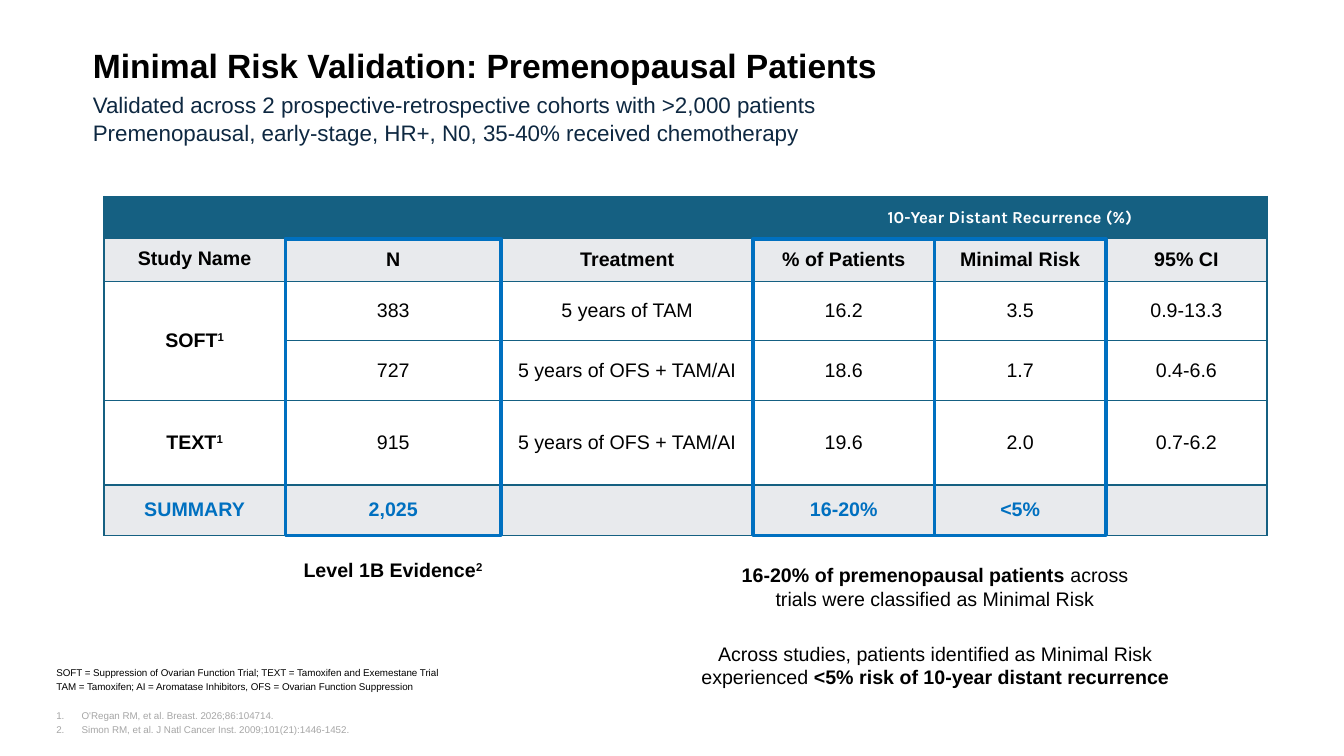
from itertools import accumulate
from pptx import Presentation
from pptx.dml.color import RGBColor
from pptx.enum.shapes import MSO_SHAPE
from pptx.enum.text import MSO_ANCHOR, MSO_AUTO_SIZE, PP_ALIGN
from pptx.oxml.ns import qn
from pptx.util import Cm, Pt
from lxml.etree import SubElement

BLACK = RGBColor(0, 0, 0)
WHITE = RGBColor(255, 255, 255)
NAVY = RGBColor(0x0E, 0x28, 0x41)
TEAL = RGBColor(0x15, 0x60, 0x82)
BLUE = RGBColor(0x00, 0x70, 0xC0)
PALE = RGBColor(0xE8, 0xEA, 0xED)
GREY = RGBColor(0xA6, 0xA6, 0xA6)

TITLE = "Minimal Risk Validation: Premenopausal Patients"
LEAD = [
    "Validated across 2 prospective-retrospective cohorts with >2,000 patients",
    "Premenopausal, early-stage, HR+, N0, 35-40% received chemotherapy",
]
SPAN = "10-Year Distant Recurrence (%)"
# A tuple holds a name and its raised reference number.
ROWS = [
    ["", "", "", SPAN, "", ""],
    ["Study Name", "N", "Treatment", "% of Patients", "Minimal Risk", "95% CI"],
    [("SOFT", "1"), "383", "5 years of TAM", "16.2", "3.5", "0.9-13.3"],
    ["", "727", "5 years of OFS + TAM/AI", "18.6", "1.7", "0.4-6.6"],
    [("TEXT", "1"), "915", "5 years of OFS + TAM/AI", "19.6", "2.0", "0.7-6.2"],
    ["SUMMARY", "2,025", "", "16-20%", "<5%", ""],
]
MERGES = [(0, 0, 0, 2), (0, 3, 0, 5), (2, 0, 3, 0)]
LEFT, TOP = 2.62, 4.95
WIDTHS = [4.57, 5.44, 6.35, 4.57, 4.32, 4.06]
HEIGHTS = [1.07, 1.07, 1.5, 1.5, 2.13, 1.27]
FRAMED = [1, 3, 4]

# Place, wrap, runs of (text, bold, raised)
CLAIMS = [
    ((6.91, 13.72, 5.99, 1.27), False,
     [("Level 1B Evidence", True, False), ("2", True, True)]),
    ((17.42, 14.02, 12.29, 1.52), True,
     [("16-20% of premenopausal patients ", True, False),
      ("across trials were classified as Minimal Risk", False, False)]),
    ((16.31, 16, 14.53, 1.52), True,
     [("Across studies, patients identified as Minimal Risk experienced ", False, False),
      ("<5% risk of 10-year distant recurrence", True, False)]),
]
TERMS = [
    "SOFT = Suppression of Ovarian Function Trial; TEXT = Tamoxifen and Exemestane Trial",
    "TAM = Tamoxifen; AI = Aromatase Inhibitors, OFS = Ovarian Function Suppression",
]
REFS = [
    "O'Regan RM, et al. Breast. 2026;86:104714.",
    "Simon RM, et al. J Natl Cancer Inst. 2009;101(21):1446-1452.",
]


def add_run(par, text, size, color=BLACK, bold=False, raised=False, face="Arial"):
    run = par.add_run()
    run.text = text
    font = run.font
    font.name, font.size, font.bold = face, Pt(size), bold
    font.color.rgb = color
    if raised:
        run._r.get_or_add_rPr().set("baseline", "30000")


def set_frame(frame, anchor, side=0, wrap=True):
    frame.auto_size = MSO_AUTO_SIZE.NONE
    frame.word_wrap = wrap
    frame.vertical_anchor = anchor
    frame.margin_left = frame.margin_right = Cm(side)
    frame.margin_top = frame.margin_bottom = 0


def place(shape, box):
    shape.left, shape.top, shape.width, shape.height = map(Cm, box)


def add_pars(frame, count):
    return [frame.paragraphs[0]] + [frame.add_paragraph() for _ in range(count - 1)]


def set_edges(cell, sides):
    """Draw the named sides (L, R, T, B) and hide the others."""
    props = cell._tc.get_or_add_tcPr()
    for side in "LRTB":
        line = SubElement(props, qn("a:ln" + side), w=str(Pt(1)))
        if side in sides:
            fill = SubElement(line, qn("a:solidFill"))
            SubElement(fill, qn("a:srgbClr"), val=str(TEAL))
        else:
            SubElement(line, qn("a:noFill"))


def fill_cell(cell, row, col, text):
    last = col + (cell.span_width if cell.is_merge_origin else 1) == len(WIDTHS)
    set_edges(cell, "TB" + "L" * (col == 0) + "R" * last)
    cell.fill.solid()
    cell.fill.fore_color.rgb = {0: TEAL, 1: PALE, 5: PALE}.get(row, WHITE)
    cell.vertical_anchor = MSO_ANCHOR.MIDDLE
    cell.margin_left = cell.margin_right = cell.margin_top = cell.margin_bottom = 0
    par = cell.text_frame.paragraphs[0]
    par.alignment = PP_ALIGN.CENTER
    if text == SPAN:
        add_run(par, text, 12, WHITE, True, face="Karla")
    elif text:
        color = BLUE if row == 5 else BLACK
        bold = col == 0 or row in (1, 5)
        for i, part in enumerate(text if isinstance(text, tuple) else (text,)):
            add_run(par, part, 14, color, bold, i == 1)
    if (row, col) == (1, 0):
        par.line_spacing = 0.85


def add_table(slide):
    table = slide.shapes.add_table(
        len(HEIGHTS), len(WIDTHS), Cm(LEFT), Cm(TOP),
        Cm(sum(WIDTHS)), Cm(sum(HEIGHTS))).table
    table.first_row = table.horz_banding = False
    for col, wide in zip(table.columns, WIDTHS):
        col.width = Cm(wide)
    for row, high in zip(table.rows, HEIGHTS):
        row.height = Cm(high)
    for r1, c1, r2, c2 in MERGES:
        table.cell(r1, c1).merge(table.cell(r2, c2))
    for r, row in enumerate(ROWS):
        for c, text in enumerate(row):
            cell = table.cell(r, c)
            if not cell.is_spanned:
                fill_cell(cell, r, c, text)


def add_claim(slide, box, wrap, runs):
    pill = slide.shapes.add_shape(MSO_SHAPE.ROUNDED_RECTANGLE, *map(Cm, box))
    pill.adjustments[0] = 0.5
    pill.shadow.inherit = False
    pill.fill.solid()
    pill.fill.fore_color.rgb = WHITE
    pill.line.fill.background()
    set_frame(pill.text_frame, MSO_ANCHOR.MIDDLE, 0.51 if wrap else 0, wrap)
    par = pill.text_frame.paragraphs[0]
    par.alignment = PP_ALIGN.CENTER
    for text, bold, raised in runs:
        add_run(par, text, 14, BLACK, bold, raised)


def add_notes(slide):
    """Terms and numbered references at the foot of the slide."""
    frame = slide.shapes.add_textbox(*map(Cm, (1.42, 17.27, 11.43, 1.27))).text_frame
    set_frame(frame, MSO_ANCHOR.BOTTOM)
    pars = add_pars(frame, len(TERMS + REFS))
    for i, (par, text) in enumerate(zip(pars, TERMS + REFS)):
        par.space_after = Pt(2)
        ref = i >= len(TERMS)
        if i == len(TERMS):
            par.space_before = Pt(10)
        if ref:
            props = par._p.get_or_add_pPr()
            props.set("marL", str(Cm(0.64)))
            props.set("indent", str(-Cm(0.64)))
            SubElement(props, qn("a:buFont"), typeface="+mj-lt")
            SubElement(props, qn("a:buAutoNum"), type="arabicPeriod")
        add_run(par, text, 7, GREY if ref else BLACK)


def main():
    deck = Presentation()
    deck.slide_width, deck.slide_height = Cm(33.87), Cm(19.05)
    slide = deck.slides.add_slide(deck.slide_layouts[1])

    title, body = slide.placeholders
    place(title, (2.34, 1.02, 24.66, 1.22))
    set_frame(title.text_frame, MSO_ANCHOR.MIDDLE)
    par = title.text_frame.paragraphs[0]
    par.alignment = PP_ALIGN.LEFT
    add_run(par, TITLE, 24, BLACK, True)

    place(body, (2.34, 2.26, 24.66, 1.7))
    set_frame(body.text_frame, MSO_ANCHOR.TOP)
    for par, text in zip(add_pars(body.text_frame, len(LEAD)), LEAD):
        par.space_before = Pt(0)
        par.line_spacing = 1.05
        props = par._p.get_or_add_pPr()
        props.set("marL", "0")
        props.set("indent", "0")
        SubElement(props, qn("a:buNone"))
        add_run(par, text, 16, NAVY)

    add_notes(slide)
    add_table(slide)
    for claim in CLAIMS:
        add_claim(slide, *claim)

    edges = list(accumulate(WIDTHS, initial=LEFT))
    for col in FRAMED:
        box = edges[col], TOP + HEIGHTS[0], WIDTHS[col], sum(HEIGHTS[1:])
        frame = slide.shapes.add_shape(MSO_SHAPE.RECTANGLE, *map(Cm, box))
        frame.shadow.inherit = False
        frame.fill.background()
        frame.line.color.rgb = BLUE
        frame.line.width = Pt(2.5)
    deck.save("out.pptx")


if __name__ == "__main__":
    main()
